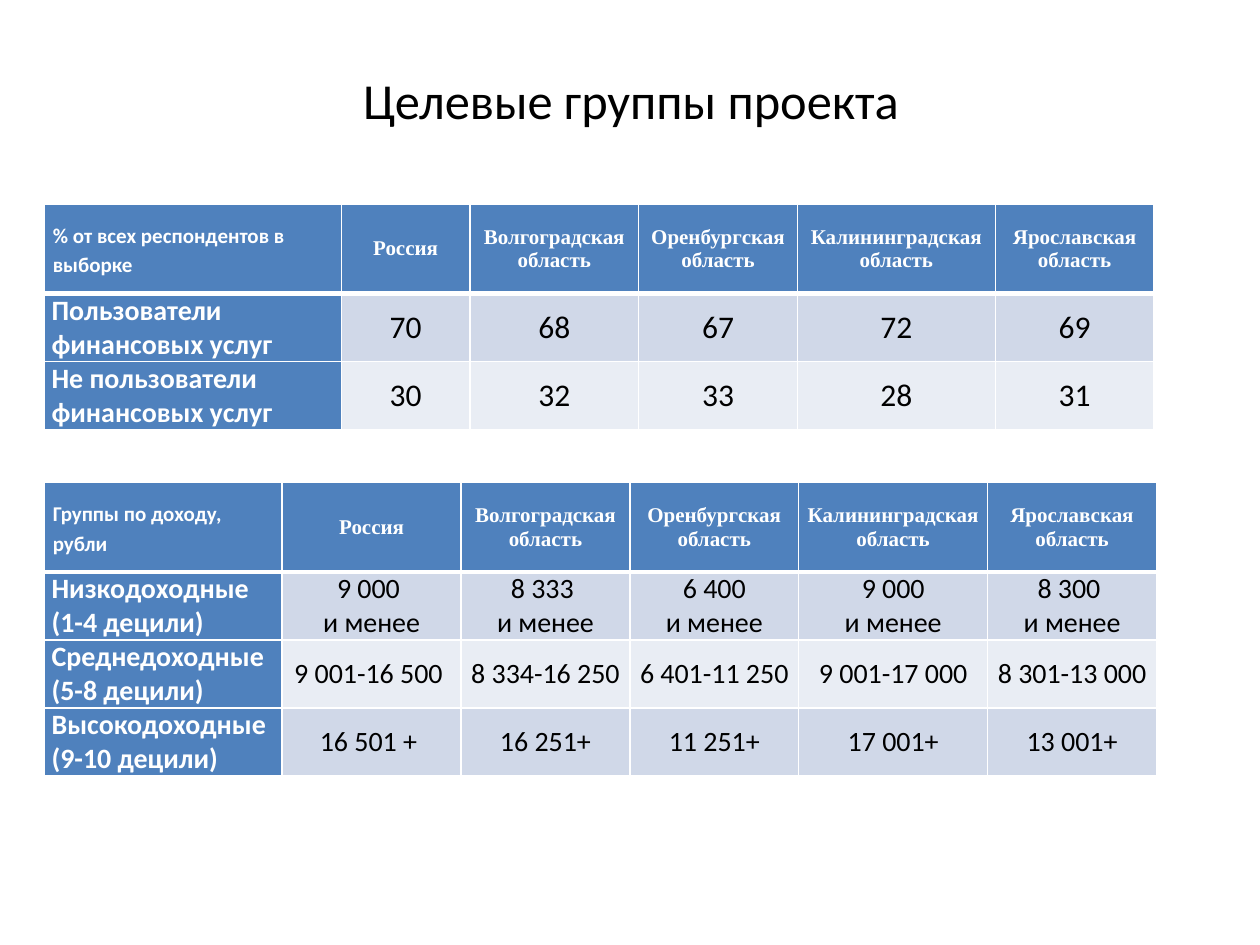
from dataclasses import dataclass

import pptx
import pptx.dml.color
import pptx.enum.text
import pptx.oxml
import pptx.oxml.ns
import pptx.util
from pptx.util import Inches

ALIGN = pptx.enum.text.PP_ALIGN
MIDDLE = pptx.enum.text.MSO_ANCHOR.MIDDLE


@dataclass(frozen=True)
class Theme:
    body_font: str = "Calibri"
    header_font: str = "Times New Roman"
    black: str = "000000"
    white: str = "FFFFFF"
    accent: str = "4F81BD"
    bands: tuple[str, str] = ("D0D8E8", "E9EDF4")
    title_size: float = 28.8
    header_size: float = 12
    label_size: float = 16
    thin_line: float = 1
    thick_line: float = 3


@dataclass(frozen=True)
class TextStyle:
    size: float
    color: str
    font: str = Theme.body_font
    bold: bool = False
    align: ALIGN = ALIGN.LEFT
    line_spacing: float = 1
    space: float = 0


@dataclass(frozen=True)
class GroupTable:
    top: float
    widths: tuple[float, ...]
    corner: str
    rows: tuple[tuple[str, ...], ...]
    value_size: float


THEME = Theme()
TABLE_LEFT = 0.35
HEADER_HEIGHT = 0.71
ROW_HEIGHT = 0.54
REGIONS = (
    "Россия",
    "Волгоградская область",
    "Оренбургская область",
    "Калининградская область",
    "Ярославская область",
)
SPACED_COLUMN = 4  # header cells from this column on have paragraph spacing

TABLES = (
    GroupTable(
        1.62,
        (2.36, 1.02, 1.34, 1.26, 1.57, 1.26),
        "% от всех респондентов в выборке",
        (
            ("Пользователи финансовых услуг", "70", "68", "67", "72", "69"),
            ("Не пользователи финансовых услуг", "30", "32", "33", "28", "31"),
        ),
        18,
    ),
    GroupTable(
        3.83,
        (1.89, 1.42, 1.34, 1.34, 1.5, 1.34),
        "Группы по доходу, рубли",
        (
            ("Низкодоходные\n(1-4 децили)", "9 000 \nи менее", "8 333 \nи менее",
             "6 400\nи менее", "9 000\nи менее", "8 300 \nи менее"),
            ("Среднедоходные\n(5-8 децили)", "9 001-16 500 ", "8 334-16 250",
             "6 401-11 250", "9 001-17 000", "8 301-13 000"),
            ("Высокодоходные\n(9-10 децили)", "16 501 + ", "16 251+",
             "11 251+", "17 001+", "13 001+"),
        ),
        16,
    ),
)


def rgb(color: str) -> pptx.dml.color.RGBColor:
    return pptx.dml.color.RGBColor.from_string(color)


def write_text(frame, text: str, style: TextStyle) -> None:
    frame.text = text
    for para in frame.paragraphs:
        para.alignment = style.align
        if style.line_spacing != 1:
            para.line_spacing = style.line_spacing
        if style.space:
            para.space_before = para.space_after = pptx.util.Pt(style.space)
        for span in para.runs:
            span.font.size = pptx.util.Pt(style.size)
            span.font.name = style.font
            span.font.bold = style.bold
            span.font.color.rgb = rgb(style.color)


def set_borders(cell, top: float, bottom: float) -> None:
    """Put white borders ahead of the cell fill, as the schema requires."""
    properties = cell._tc.get_or_add_tcPr()
    widths = {"lnL": THEME.thin_line, "lnR": THEME.thin_line, "lnT": top, "lnB": bottom}
    for position, (tag, width) in enumerate(widths.items()):
        line = pptx.oxml.parse_xml(
            f'<a:{tag} {pptx.oxml.ns.nsdecls("a")} w="{pptx.util.Pt(width)}">'
            f'<a:solidFill><a:srgbClr val="{THEME.white}"/></a:solidFill></a:{tag}>'
        )
        properties.insert(position, line)


def cell_style(row: int, column: int, value_size: float) -> TextStyle:
    if row == 0 and column == 0:
        return TextStyle(THEME.header_size, THEME.white, bold=True, line_spacing=1.15)
    if row == 0:
        return TextStyle(THEME.header_size, THEME.white, THEME.header_font, True,
                         ALIGN.CENTER, space=1 if column >= SPACED_COLUMN else 0)
    if column == 0:
        return TextStyle(THEME.label_size, THEME.white, bold=True)
    return TextStyle(value_size, THEME.black, align=ALIGN.CENTER)


def draw_table(page, group: GroupTable) -> None:
    rows = ((group.corner, *REGIONS), *group.rows)
    height = HEADER_HEIGHT + ROW_HEIGHT * len(group.rows)
    table = page.shapes.add_table(
        len(rows), len(group.widths), Inches(TABLE_LEFT), Inches(group.top),
        Inches(sum(group.widths)), Inches(height),
    ).table
    table.horz_banding = False
    for column, width in zip(table.columns, group.widths):
        column.width = Inches(width)
    for row, texts in enumerate(rows):
        table.rows[row].height = Inches(ROW_HEIGHT if row else HEADER_HEIGHT)
        for column, text in enumerate(texts):
            cell = table.cell(row, column)
            cell.vertical_anchor = MIDDLE
            cell.margin_left = cell.margin_right = Inches(0.06 if row else 0.07)
            cell.margin_top = cell.margin_bottom = 0
            is_heading = row == 0 or column == 0
            cell.fill.solid()
            cell.fill.fore_color.rgb = rgb(
                THEME.accent if is_heading else THEME.bands[(row - 1) % 2])
            write_text(cell.text_frame, text, cell_style(row, column, group.value_size))
            set_borders(
                cell,
                top=THEME.thick_line if row == 1 else THEME.thin_line,
                bottom=THEME.thick_line if row == 0 else THEME.thin_line,
            )


def draw_title(page, text: str) -> None:
    box = page.shapes.add_textbox(Inches(0.51), Inches(0.52), Inches(9), Inches(0.54))
    box.text_frame.word_wrap = True
    box.text_frame.vertical_anchor = MIDDLE
    write_text(box.text_frame, text,
               TextStyle(THEME.title_size, THEME.black, align=ALIGN.CENTER))


def main() -> None:
    deck = pptx.Presentation()
    deck.slide_width, deck.slide_height = Inches(10), Inches(7.5)
    page = deck.slides.add_slide(deck.slide_layouts[6])
    draw_title(page, "Целевые группы проекта")
    for group in TABLES:
        draw_table(page, group)
    deck.save("out.pptx")


if __name__ == "__main__":
    main()
